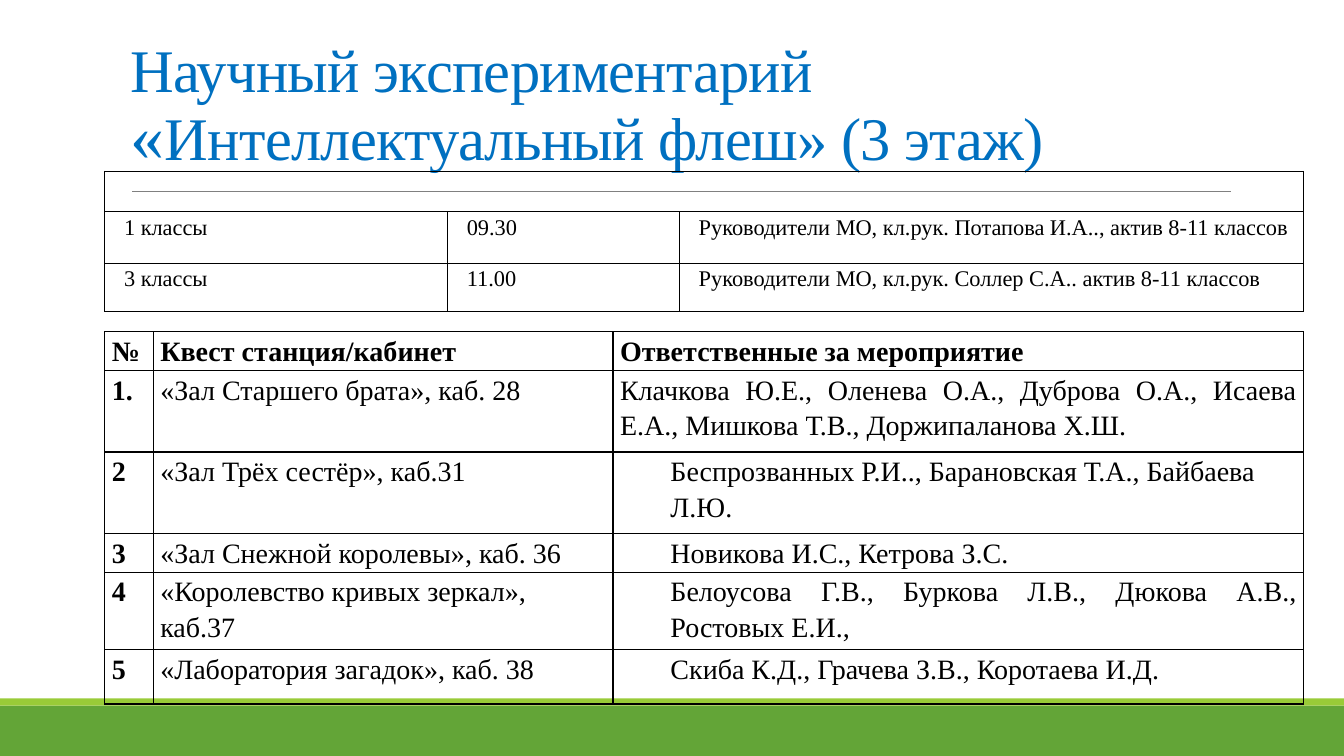
from dataclasses import dataclass

from lxml.etree import SubElement
from pptx import Presentation
from pptx.dml.color import RGBColor
from pptx.enum.shapes import MSO_CONNECTOR, MSO_SHAPE
from pptx.enum.text import MSO_ANCHOR, PP_ALIGN
from pptx.oxml.ns import qn
from pptx.slide import Slide
from pptx.table import Table, _Cell
from pptx.util import Inches, Pt

FONT = "Times New Roman"
BLACK = RGBColor(0x00, 0x00, 0x00)
BLUE = RGBColor(0x00, 0x70, 0xC0)
GREEN = RGBColor(0x63, 0xA5, 0x37)
LIME = RGBColor(0x99, 0xCB, 0x38)
GREY = RGBColor(0x80, 0x80, 0x80)
TITLE_SIZE = 43.2


@dataclass
class Band:
    top: float
    height: float
    color: RGBColor


@dataclass
class Entry:
    text: str
    bold: bool = False
    align: PP_ALIGN = PP_ALIGN.JUSTIFY
    margin: float = 0
    indent: float = 0


@dataclass
class Grid:
    top: float
    columns: list[float]
    rows: list[float]
    size: float
    entries: list[list[Entry]]


def class_row(*texts: str) -> list[Entry]:
    return [Entry(text, indent=0.12) for text in texts]


def station_row(number: str, station: str, people: str, margin: float = 0.5,
                align: PP_ALIGN = PP_ALIGN.JUSTIFY) -> list[Entry]:
    return [Entry(number, bold=True), Entry(station, align=PP_ALIGN.LEFT),
            Entry(people, align=align, margin=margin)]


BANDS = [Band(7, 0.5, GREEN), Band(6.93, 0.07, LIME)]

TITLE = [("Научный экспериментарий ", TITLE_SIZE), ("«", 48.6),
         ("Интеллектуальный флеш» (3 этаж)", TITLE_SIZE)]

CLASSES = Grid(1.7, [3.4, 2.3, 6.19], [0.37, 0.51, 0.48], 16, [
    [],
    class_row("1 классы", "09.30",
              "Руководители МО, кл.рук. Потапова И.А.., актив 8-11 классов"),
    class_row("3 классы", "11.00",
              "Руководители МО, кл.рук. Соллер С.А.. актив 8-11 классов"),
])

STATIONS = Grid(3.29, [0.48, 4.56, 6.85], [0.27, 0.81, 0.81, 0.27, 0.54, 0.54], 20, [
    [Entry(text, bold=True)
     for text in ("№", "Квест станция/кабинет", "Ответственные за мероприятие")],
    station_row("1.", "«Зал Старшего брата», каб. 28",
                "Клачкова Ю.Е., Оленева О.А., Дуброва О.А., Исаева Е.А., "
                "Мишкова Т.В., Доржипаланова Х.Ш.", margin=0),
    station_row("2", "«Зал Трёх сестёр», каб.31",
                "Беспрозванных Р.И.., Барановская Т.А., Байбаева Л.Ю.",
                align=PP_ALIGN.LEFT),
    station_row("3", "«Зал Снежной королевы», каб. 36", "Новикова И.С., Кетрова З.С."),
    station_row("4", "«Королевство кривых зеркал», каб.37",
                "Белоусова Г.В., Буркова Л.В., Дюкова А.В., Ростовых Е.И.,"),
    station_row("5", "«Лаборатория загадок», каб. 38",
                "Скиба К.Д., Грачева З.В., Коротаева И.Д."),
])


def add_band(page: Slide, band: Band) -> None:
    box = page.shapes.add_shape(MSO_SHAPE.RECTANGLE, 0, Inches(band.top),
                                Inches(13.33), Inches(band.height))
    box.shadow.inherit = False
    box.fill.solid()
    box.fill.fore_color.rgb = band.color
    box.line.fill.background()


def add_rule(page: Slide) -> None:
    """Draw the thin line under the title."""
    rule = page.shapes.add_connector(MSO_CONNECTOR.STRAIGHT, Inches(1.31), Inches(1.9),
                                     Inches(12.21), Inches(1.9))
    rule.line.color.rgb = GREY
    rule.line.width = Pt(0.5)
    SubElement(rule._element.spPr, qn("a:effectLst"))


def add_span(para, text: str, *, size: float, color: RGBColor = BLACK,
             bold: bool = False, spacing: float = 0) -> None:
    span = para.add_run()
    span.text = text
    span.font.name = FONT
    span.font.size = Pt(size)
    span.font.bold = bold
    span.font.color.rgb = color
    if spacing:
        span.font._element.set("spc", str(round(spacing * 100)))


def add_title(page: Slide) -> None:
    box = page.shapes.add_textbox(Inches(1.2), Inches(0.91), Inches(11), Inches(1.59))
    frame = box.text_frame
    frame.word_wrap = True
    frame.vertical_anchor = MSO_ANCHOR.BOTTOM
    para = frame.paragraphs[0]
    para.line_spacing = 0.85
    for text, size in TITLE:
        add_span(para, text, size=size, color=BLUE, spacing=-0.5)
    para.add_line_break()
    line_size = str(round(TITLE_SIZE * 100))
    SubElement(para._p.find(qn("a:br")), qn("a:rPr"), sz=line_size)
    SubElement(para._p, qn("a:endParaRPr"), sz=line_size)


def style_cell(cell: _Cell) -> None:
    """Give a cell thin black borders and no fill."""
    properties = cell._tc.get_or_add_tcPr()
    for side in ("a:lnL", "a:lnR", "a:lnT", "a:lnB"):
        border = SubElement(properties, qn(side), w=str(Pt(1)))
        fill = SubElement(border, qn("a:solidFill"))
        SubElement(fill, qn("a:srgbClr"), val=str(BLACK))
    cell.fill.background()


def fill_cell(cell: _Cell, entry: Entry, size: float) -> None:
    cell.margin_left = cell.margin_right = Inches(0.07)
    cell.margin_top = cell.margin_bottom = 0
    para = cell.text_frame.paragraphs[0]
    para.alignment = entry.align
    para.line_spacing = 1.15
    indents = para._p.get_or_add_pPr()
    indents.set("marL", str(Inches(entry.margin)))
    indents.set("indent", str(Inches(entry.indent)))
    add_span(para, entry.text, size=size, bold=entry.bold)


def add_grid(page: Slide, grid: Grid) -> Table:
    frame = page.shapes.add_table(
        len(grid.rows), len(grid.columns), Inches(1.04), Inches(grid.top),
        Inches(sum(grid.columns)), Inches(sum(grid.rows)))
    table = frame.table
    table.first_row = table.horz_banding = False
    for column, width in zip(table.columns, grid.columns):
        column.width = Inches(width)
    for row, height, entries in zip(table.rows, grid.rows, grid.entries):
        row.height = Inches(height)
        for cell in row.cells:
            style_cell(cell)
        for cell, entry in zip(row.cells, entries):
            fill_cell(cell, entry, grid.size)
    return table


def main() -> None:
    deck = Presentation()
    deck.slide_width, deck.slide_height = Inches(13.33), Inches(7.5)
    page = deck.slides.add_slide(deck.slide_layouts[6])
    for band in BANDS:
        add_band(page, band)
    add_rule(page)
    add_title(page)
    classes = add_grid(page, CLASSES)
    classes.cell(0, 0).merge(classes.cell(0, 2))
    add_grid(page, STATIONS)
    deck.save("out.pptx")


if __name__ == "__main__":
    main()
